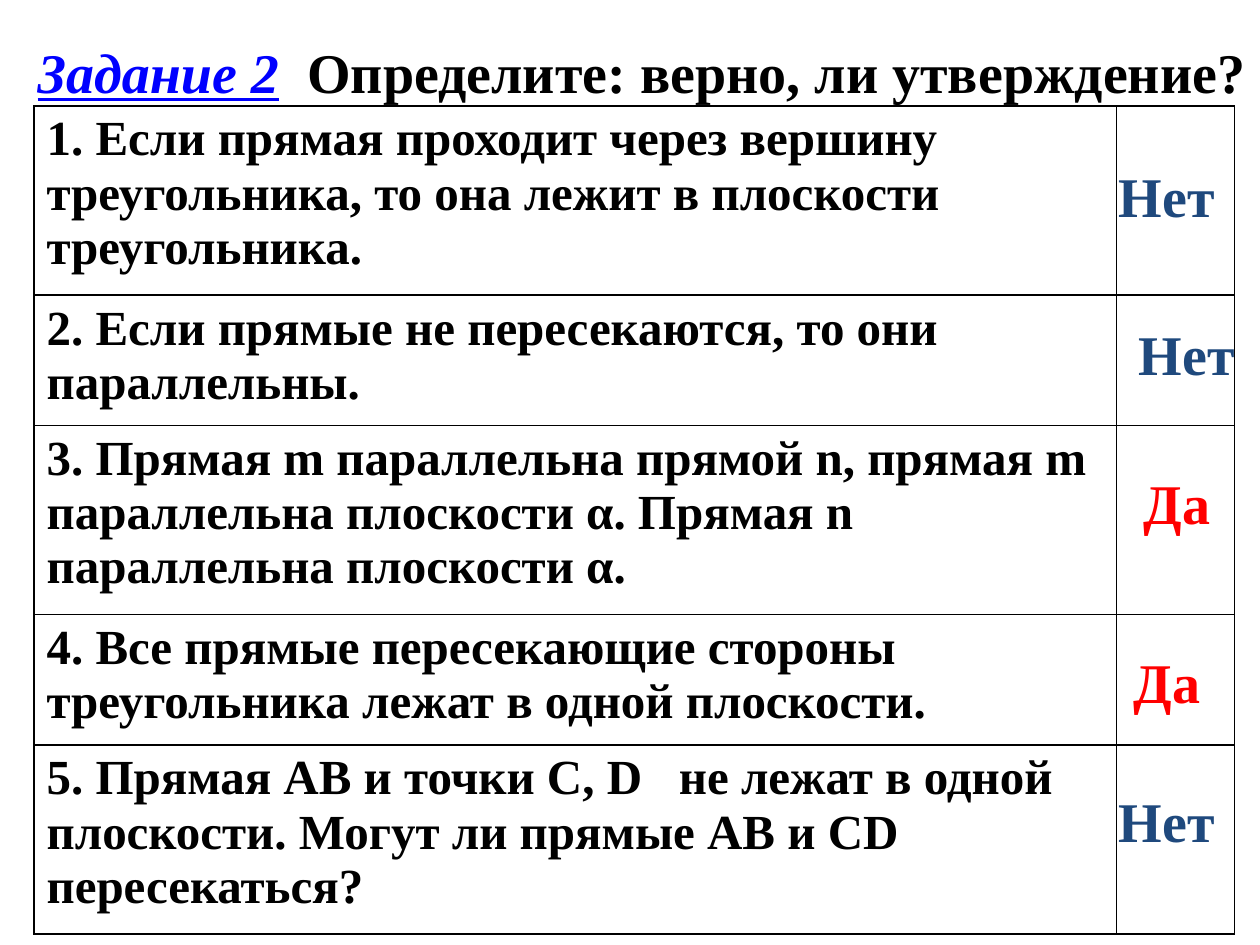
from lxml.etree import SubElement
from pptx import Presentation
from pptx.dml.color import RGBColor
from pptx.enum.text import MSO_ANCHOR
from pptx.oxml.ns import qn
from pptx.util import Inches, Pt

FONT = "Times New Roman"
BLACK = RGBColor(0x00, 0x00, 0x00)
BLUE = RGBColor(0x00, 0x00, 0xFF)
NAVY = RGBColor(0x1F, 0x49, 0x7D)
RED = RGBColor(0xFF, 0x00, 0x00)

STATEMENTS = [
    ("1. Если прямая проходит через вершину треугольника, то она лежит в плоскости треугольника.", 1.5),
    ("2. Если прямые не пересекаются, то они параллельны.", 1.03),
    ("3. Прямая m параллельна прямой n, прямая m параллельна плоскости α. "
     "Прямая n параллельна плоскости α.", 1.5),
    ("4. Все прямые пересекающие стороны треугольника лежат в одной плоскости.", 1.03),
    ("5. Прямая АВ и точки С, D   не лежат в одной плоскости. "
     "Могут ли прямые АВ и СD  пересекаться?", 1.5),
]
ANSWERS = [
    ("Нет", NAVY, 8.78, 1.23),
    ("Нет", NAVY, 8.94, 2.49),
    ("Да", RED, 8.98, 3.67),
    ("Да", RED, 8.9, 5.09),
    ("Нет", NAVY, 8.78, 6.19),
]


def add_text(paragraph, text, size=32, color=BLACK, italic=False, underline=False):
    run = paragraph.add_run()
    run.text = text
    font = run.font
    font.name = FONT
    font.size = Pt(size)
    font.bold = True
    font.italic = italic
    font.underline = underline
    font.color.rgb = color


def add_box(slide, left, top, width, height):
    box = slide.shapes.add_textbox(Inches(left), Inches(top), Inches(width), Inches(height))
    box.text_frame.word_wrap = True
    return box.text_frame


def add_title(slide, left, top, width, height):
    frame = add_box(slide, left, top, width, height)
    frame.vertical_anchor = MSO_ANCHOR.MIDDLE
    paragraph = frame.paragraphs[0]
    add_text(paragraph, "Задание 2", color=BLUE, italic=True, underline=True)
    add_text(paragraph, "  Определите: верно, ли утверждение?")


def set_borders(cell):
    properties = cell._tc.get_or_add_tcPr()
    for position, side in enumerate(("a:lnL", "a:lnR", "a:lnT", "a:lnB")):
        line = SubElement(properties, qn(side), w=str(Pt(1)))
        fill = SubElement(line, qn("a:solidFill"))
        SubElement(fill, qn("a:srgbClr"), val=str(BLACK))
        properties.insert(position, line)


def add_statements(slide, left, top, width, height, answer_width=0.94):
    table = slide.shapes.add_table(
        len(STATEMENTS), 2, Inches(left), Inches(top), Inches(width), Inches(height)
    ).table
    table.first_row = False
    table.horz_banding = False
    table.columns[0].width = Inches(width - answer_width)
    table.columns[1].width = Inches(answer_width)
    for row, (statement, row_height) in zip(table.rows, STATEMENTS):
        row.height = Inches(row_height)
        for cell in row.cells:
            cell.fill.background()
            set_borders(cell)
        add_text(row.cells[0].text_frame.paragraphs[0], statement, size=28)


def add_answers(slide, width, height):
    for answer, color, left, top in ANSWERS:
        frame = add_box(slide, left, top, width, height)
        add_text(frame.paragraphs[0], answer, color=color)


def main():
    presentation = Presentation()
    presentation.slide_width = Inches(10)
    presentation.slide_height = Inches(7.5)
    slide = presentation.slides.add_slide(presentation.slide_layouts[6])
    add_title(slide, 0.2, 0.25, 9.8, 0.63)
    add_statements(slide, 0.27, 0.84, 9.53, 6.56)
    add_answers(slide, 1.02, 0.63)
    presentation.save("out.pptx")


if __name__ == "__main__":
    main()
